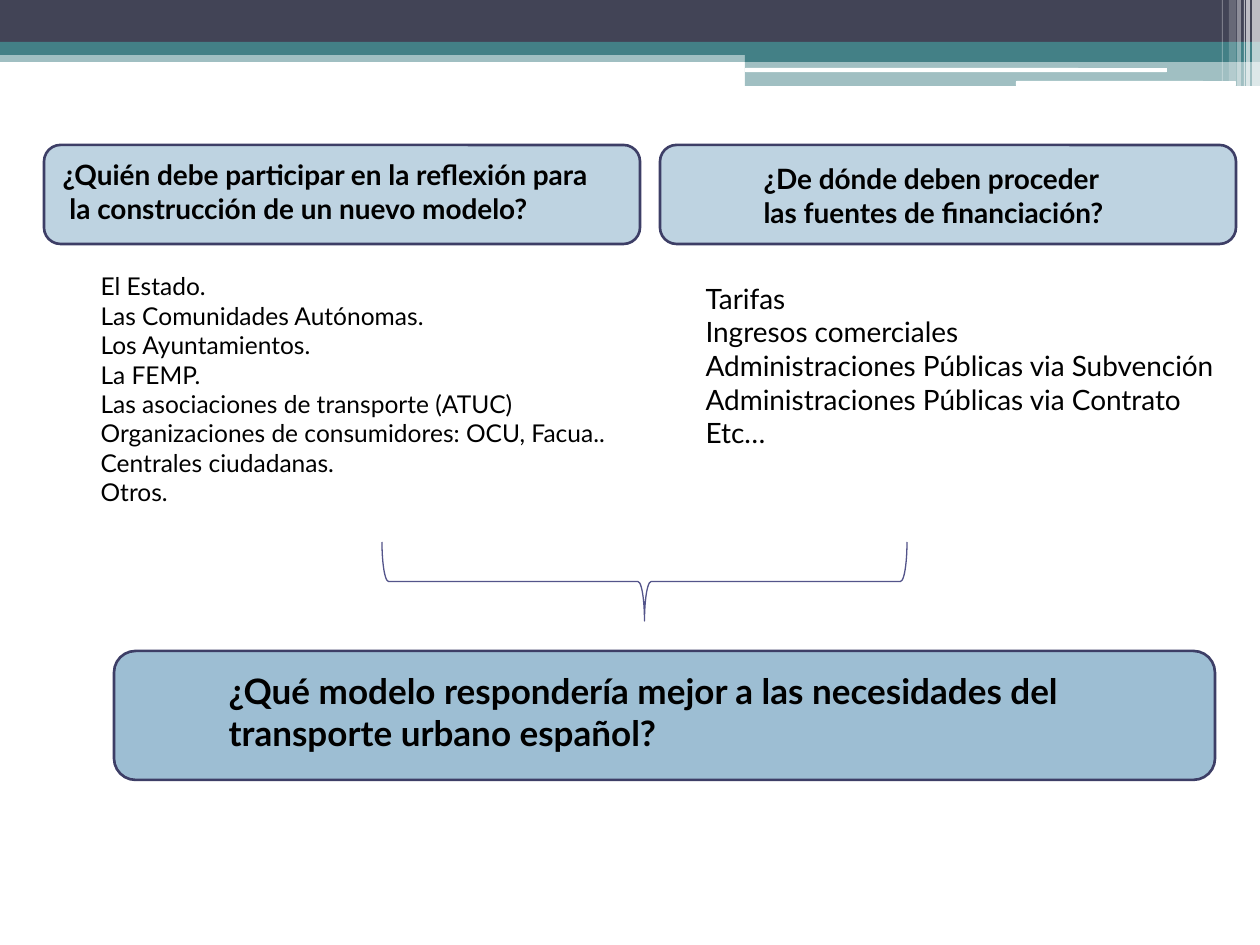
from dataclasses import dataclass

from lxml.etree import SubElement
from pptx import Presentation
from pptx.dml.color import RGBColor
from pptx.enum.shapes import MSO_SHAPE as Preset
from pptx.enum.text import MSO_ANCHOR as Anchor, MSO_AUTO_SIZE as AutoSize, PP_ALIGN as Align
from pptx.oxml.ns import qn
from pptx.util import Pt

EMU_PER_PX = 914400 / 126


def px(length):
    return round(length * EMU_PER_PX)


@dataclass(frozen=True)
class Theme:
    font: str = "Lato"
    ink: str = "000000"
    white: str = "FFFFFF"
    slate: str = "424456"
    teal: str = "438086"
    card: str = "BED3E1"
    strong_card: str = "9DBED3"
    outline: str = "3D3E66"
    brace: str = "53548A"
    small: int = 14
    medium: int = 16
    large: int = 20


class SlideBuilder:
    def __init__(self, page, theme):
        self.page = page
        self.theme = theme

    def shape(self, preset, area, fill=None, line=None, weight=1.5, opacity=100):
        shape = self.page.shapes.add_shape(preset, *map(px, area))
        shape.shadow.inherit = False
        if fill:
            shape.fill.solid()
            shape.fill.fore_color.rgb = RGBColor.from_string(fill)
            if opacity < 100:
                color = shape.fill._xPr.find(qn("a:solidFill"))[0]
                SubElement(color, qn("a:alpha"), val=str(opacity * 1000))
        else:
            shape.fill.background()
        if line:
            shape.line.color.rgb = RGBColor.from_string(line)
            shape.line.width = Pt(weight)
        else:
            shape.line.fill.background()
        return shape

    def card(self, area, fill):
        return self.shape(Preset.ROUNDED_RECTANGLE, area, fill, self.theme.outline)

    def text(self, slot, area, lines, size, bold, anchor, margin=0, indent=0):
        box = self.page.placeholders[slot]
        box.left, box.top, box.width, box.height = map(px, area)
        # Bring the text in front of the cards
        box.element.getparent().append(box.element)
        frame = box.text_frame
        frame.word_wrap = True
        frame.auto_size = AutoSize.NONE
        frame.vertical_anchor = anchor
        for number, line in enumerate(lines):
            para = frame.add_paragraph() if number else frame.paragraphs[0]
            para.alignment = Align.LEFT
            para.line_spacing = 1.0
            para.space_before = para.space_after = Pt(0)
            props = para._p.get_or_add_pPr()
            props.set("marL", str(px(margin)))
            props.set("indent", str(px(indent)))
            SubElement(props, qn("a:buNone"))
            span = para.add_run()
            span.text = line
            span.font.name = self.theme.font
            span.font.size = Pt(size)
            span.font.bold = bold
            span.font.color.rgb = RGBColor.from_string(self.theme.ink)

    def heading(self, slot, area, lines, size):
        self.text(slot, area, lines, size, True, Anchor.MIDDLE, indent=62)

    def list(self, slot, area, lines, size):
        self.text(slot, area, lines, size, False, Anchor.TOP, margin=63)


def main():
    theme = Theme()
    deck = Presentation()
    deck.slide_width, deck.slide_height = px(1260), px(945)
    comparison = deck.slide_layouts[4]
    slide = SlideBuilder(deck.slides.add_slide(comparison), theme)

    # Header bands
    bands = [
        ((0, 50, 1260, 12), theme.teal, 50),
        ((0, 0, 1260, 42), theme.slate, 100),
        ((0, 42, 1260, 13), theme.teal, 100),
        ((745, 49, 515, 13), theme.teal, 100),
        ((745, 61, 515, 25), theme.teal, 50),
    ]
    for area, color, opacity in bands:
        slide.shape(Preset.RECTANGLE, area, color, opacity=opacity)
    for area in [(745, 68, 422, 4), (1016, 81, 220, 5)]:
        slide.shape(Preset.ROUNDED_RECTANGLE, area, theme.white)

    # Translucent stripes at the right edge: left, width, height, opacity
    stripes = [
        (1252, 8, 86, 65), (1246, 4, 86, 65), (1244, 1, 86, 60),
        (1237, 4, 86, 40), (1229, 7, 81, 20), (1222, 1, 81, 30),
    ]
    for left, width, height, opacity in stripes:
        slide.shape(Preset.RECTANGLE, (left, 0, width, height), theme.white, opacity=opacity)

    # Cards
    slide.card((114, 651, 1101, 129), theme.strong_card)
    slide.card((660, 145, 576, 99), theme.card)
    slide.card((44, 145, 596, 99), theme.card)

    # Who takes part
    slide.heading(1, (-12, 151, 662, 81), [
        "¿Quién debe participar en la reflexión para",
        " la construcción de un nuevo modelo?",
    ], theme.medium)
    slide.list(2, (25, 265, 630, 251), [
        "El Estado.",
        "Las Comunidades Autónomas.",
        "Los Ayuntamientos.",
        "La FEMP.",
        "Las asociaciones de transporte (ATUC)",
        "Organizaciones de consumidores: OCU, Facua..",
        "Centrales ciudadanas.",
        "Otros.",
    ], theme.small)

    # Where the funding comes from
    slide.heading(3, (689, 155, 456, 81), [
        "¿De dónde deben proceder",
        "las fuentes de financiación?",
    ], theme.medium)
    slide.list(4, (630, 275, 630, 183), [
        "Tarifas",
        "Ingresos comerciales",
        "Administraciones Públicas via Subvención",
        "Administraciones Públicas via Contrato",
        "Etc…",
    ], theme.medium)

    # Closing question
    slide.heading(0, (154, 663, 988, 97), [
        "¿Qué modelo respondería mejor a las necesidades del",
        "transporte urbano español?",
    ], theme.large)

    # Brace joining both lists
    brace = slide.shape(Preset.LEFT_BRACE, (605, 319, 79, 525), line=theme.brace, weight=0.75)
    brace.rotation = 270

    deck.save("out.pptx")


if __name__ == "__main__":
    main()
